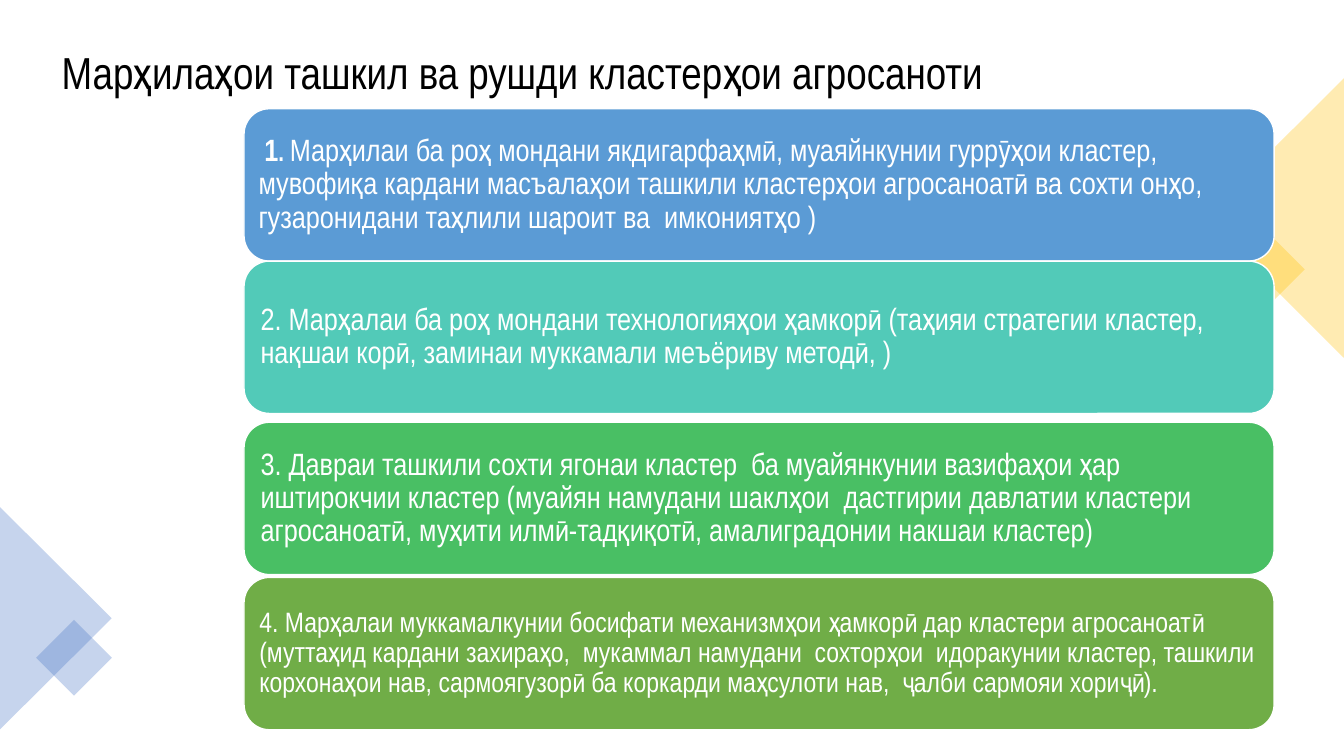
from lxml.etree import SubElement
from pptx import Presentation
from pptx.dml.color import RGBColor
from pptx.enum.shapes import MSO_SHAPE as Preset
from pptx.enum.text import MSO_ANCHOR as Anchor, MSO_AUTO_SIZE as AutoSize, PP_ALIGN as Align
from pptx.oxml.ns import qn
from pptx.util import Cm, Pt

FONT = "Arial Narrow"
WHITE = RGBColor(0xFF, 0xFF, 0xFF)
BLACK = RGBColor(0x00, 0x00, 0x00)
GOLD = RGBColor(0xFF, 0xC0, 0x00)
BLUE = RGBColor(0x44, 0x72, 0xC4)
SKY = RGBColor(0x5B, 0x9B, 0xD5)
TEAL = RGBColor(0x52, 0xCA, 0xB8)
GREEN = RGBColor(0x49, 0xBF, 0x64)
OLIVE = RGBColor(0x70, 0xAD, 0x47)

TITLE = "Марҳилаҳои ташкил ва рушди кластерҳои агросаноти"

# preset, left, top, width, height (cm), rotation, colour
DECORATIONS = [
    (Preset.RECTANGLE, 30.71, 5.89, 1.8, 1.8, 45, GOLD),
    (Preset.ISOSCELES_TRIANGLE, 28.58, 3.73, 7.04, 3.53, 270, GOLD),
    (Preset.ISOSCELES_TRIANGLE, -1.4, 14.17, 5.61, 2.82, 90, BLUE),
    (Preset.RECTANGLE, 1.19, 15.9, 1.35, 1.35, 45, BLUE),
]

# top (cm), colour, inset (cm), spans of (text, size, bold)
STAGES = [
    (2.74, SKY, 0.18, [
        (" ", 18, True), ("1", 22, True), (". ", 18, True),
        ("Марҳилаи ба роҳ мондани якдигарфаҳмӣ, муаяйнкунии гуррӯҳои кластер, "
         "мувофиқа кардани масъалаҳои ташкили кластерҳои агросаноатӣ ва сохти онҳо, "
         "гузаронидани таҳлили шароит ва  имкониятҳо )", 22, False)]),
    (6.58, TEAL, 0.23, [
        ("2. Марҳалаи ба роҳ мондани технологияҳои ҳамкорӣ (таҳияи стратегии кластер, "
         "нақшаи корӣ, заминаи муккамали меъёриву методӣ, )", 22, False)]),
    (10.64, GREEN, 0.23, [
        ("3. Давраи ташкили сохти ягонаи кластер  ба муайянкунии вазифаҳои ҳар "
         "иштирокчии кластер (муайян намудани шаклҳои  дастгирии давлатии кластери "
         "агросаноатӣ, муҳити илмӣ-тадқиқотӣ, амалиградонии накшаи кластер)", 22, False)]),
    (14.55, OLIVE, 0.2, [
        ("4. Марҳалаи муккамалкунии босифати механизмҳои ҳамкорӣ дар кластери агросаноатӣ "
         "(муттаҳид кардани захираҳо,  мукаммал намудани  сохторҳои  идоракунии кластер, "
         "ташкили корхонаҳои нав, сармоягузорӣ ба коркарди маҳсулоти нав,  "
         "ҷалби сармояи хориҷӣ).", 20, False)]),
]


def add_span(para, text, size, color, bold=False):
    span = para.add_run()
    span.text = text
    span.font.name = FONT
    span.font.size = Pt(size)
    span.font.bold = bold
    span.font.color.rgb = color


def add_filled_shape(page, preset, left, top, width, height, color):
    shape = page.shapes.add_shape(preset, Cm(left), Cm(top), Cm(width), Cm(height))
    shape.shadow.inherit = False
    shape.fill.solid()
    shape.fill.fore_color.rgb = color
    return shape


def add_decoration(page, preset, left, top, width, height, rotation, color):
    shape = add_filled_shape(page, preset, left, top, width, height, color)
    shape.rotation = rotation
    shape.line.fill.background()
    color_node = shape.fill._xPr.find(qn("a:solidFill"))[0]
    SubElement(color_node, qn("a:alpha"), val="30000")


def add_stage(page, top, color, inset, spans):
    panel = add_filled_shape(page, Preset.ROUNDED_RECTANGLE, 6.15, top, 25.96, 3.84, color)
    panel.line.color.rgb = WHITE
    panel.line.width = Pt(1)
    frame = panel.text_frame
    frame.word_wrap = True
    frame.vertical_anchor = Anchor.MIDDLE
    frame.margin_left = frame.margin_right = Cm(inset)
    frame.margin_top = frame.margin_bottom = Cm(inset)
    para = frame.paragraphs[0]
    para.alignment = Align.LEFT
    para.line_spacing = 0.9
    for text, size, bold in spans:
        add_span(para, text, size, WHITE, bold)


def set_title(page, text):
    title = page.shapes.title
    title.left, title.top, title.width, title.height = Cm(1.3), Cm(0.99), Cm(29.03), Cm(1.63)
    frame = title.text_frame
    frame.word_wrap = True
    frame.auto_size = AutoSize.NONE
    frame.vertical_anchor = Anchor.TOP
    para = frame.paragraphs[0]
    para.alignment = Align.LEFT
    add_span(para, text, 32, BLACK)


def main():
    deck = Presentation()
    deck.slide_width, deck.slide_height = Cm(33.87), Cm(19.05)
    page = deck.slides.add_slide(deck.slide_layouts.get_by_name("Title Only"))
    set_title(page, TITLE)
    for decoration in DECORATIONS:
        add_decoration(page, *decoration)
    for stage in STAGES:
        add_stage(page, *stage)
    deck.save("out.pptx")


if __name__ == "__main__":
    main()
